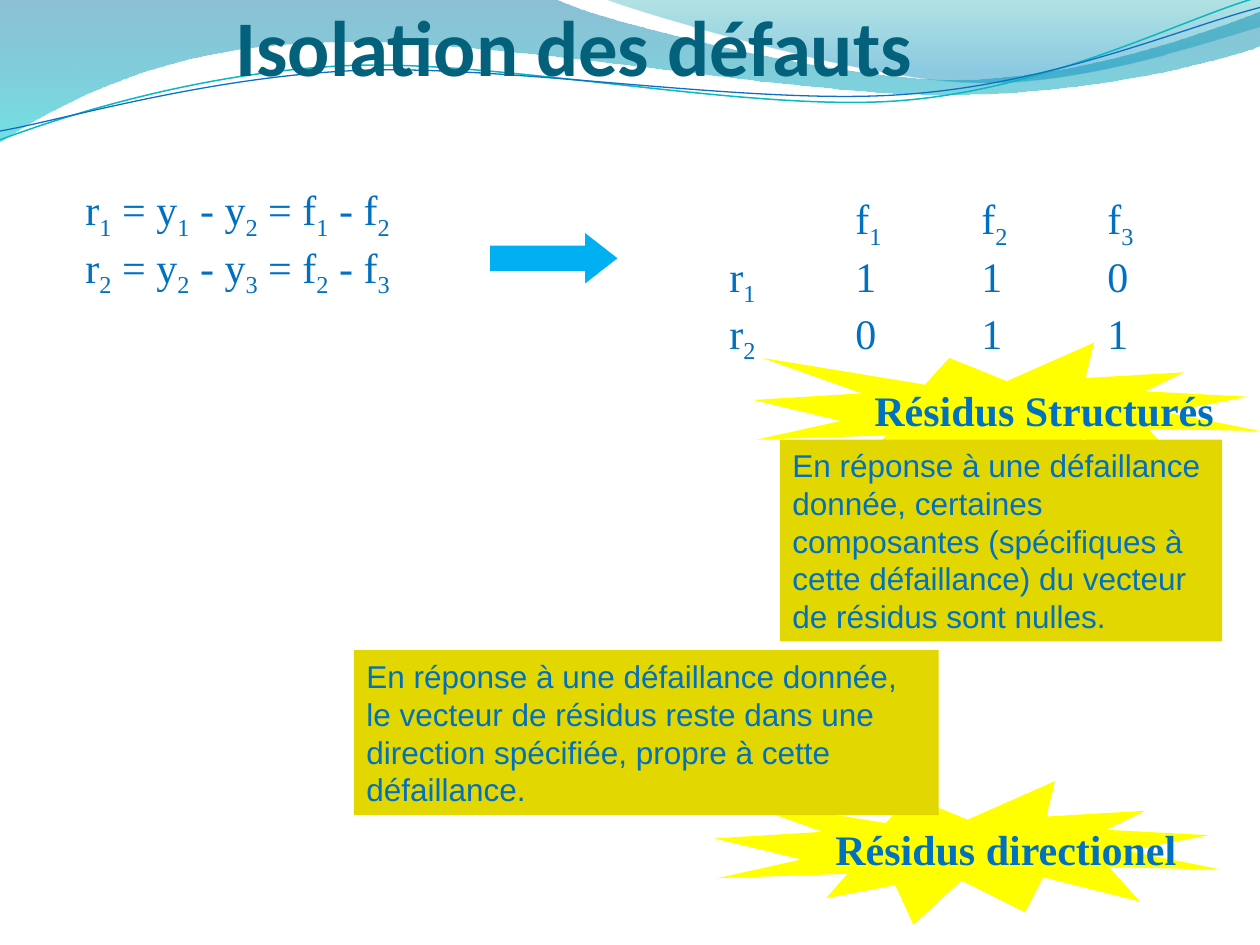
from math import cos, radians, sin

from lxml.etree import SubElement
from pptx import Presentation
from pptx.dml.color import RGBColor
from pptx.enum.shapes import MSO_SHAPE
from pptx.enum.text import MSO_ANCHOR, MSO_AUTO_SIZE, PP_ALIGN
from pptx.oxml.ns import qn
from pptx.util import Inches, Pt

HUES = {
    "title": "04617B", "text": "0070C0", "star": "FFFF00", "note": "E2D700",
    "arrow": "00B0F0", "teal": "0AB8BF", "blue": "0F6FC6",
    "deep": "0074A1", "cyan": "00C6CF", "sea": "00A1A9", "sky": "008BBF",
}
TITLE = {"name": "Calibri", "size": Pt(45), "bold": True}
MATH = {"name": "Times New Roman", "size": Pt(24)}
LABEL = {**MATH, "bold": True}
BODY = {"name": "Arial", "size": Pt(18)}
TILT = 357.3

# Each outline: start, then lines (one point) or curves (three points)
BANDS = [
    ([[(0, 0)], [(4.4, -0.01)], [(4.76, 0.17), (6.64, 0.63), (7.58, 0.63)],
      [(8.53, 0.63), (9.58, 0.26), (10, 0.09)], [(10.01, 0.36)],
      [(9.83, 0.44), (8.7, 0.76), (7.46, 0.75)],
      [(6.22, 0.75), (3.82, 0.28), (2.57, 0.34)],
      [(1.29, 0.36), (0.46, 0.83), (-0.01, 1.13)], [(0, 0)]],
     [(0, "deep", 45), (1, "cyan", 55)]),
    ([[(4.79, -0.01)], [(5.09, 0.11), (6.82, 0.62), (7.69, 0.65)],
      [(8.56, 0.69), (9.61, 0.32), (10, 0.21)], [(10, 0)], [(4.79, -0.01)]],
     [(0, "sea", 30), (0.8, "sky", 45)]),
]
WAVES = [
    ([[(0, 1.11)], [(0.48, 0.93), (1.58, 0.57), (2.77, 0.52)],
      [(3.95, 0.47), (5.93, 0.89), (7.13, 0.8)],
      [(8.33, 0.71), (9.38, 0.15), (9.98, -0.02)]],
     (4.99, 0.57), "teal", 0.85),
    ([[(0, 1.04)], [(0.47, 0.96), (1.64, 0.61), (2.83, 0.56)],
      [(4.03, 0.51), (5.97, 0.84), (7.17, 0.75)],
      [(8.36, 0.67), (9.41, 0.21), (10, 0.06)]],
     (5, 0.59), "blue", 0.75),
]


def rgb(hue):
    return RGBColor.from_string(HUES[hue])


def turn(dot, mid, angle):
    """Rotate a point clockwise about mid."""
    c, s = cos(radians(angle)), sin(radians(angle))
    x, y = dot[0] - mid[0], dot[1] - mid[1]
    return mid[0] + x * c - y * s, mid[1] + x * s + y * c


def add_free(slide, parts, close):
    """Draw an outline, joining each three points into a curve."""
    spots = [(Inches(x), Inches(y)) for part in parts for x, y in part]
    pen = slide.shapes.build_freeform(*spots[0])
    pen.add_line_segments(spots[1:], close=close)
    free = pen.convert_to_shape()
    free.shadow.inherit = False
    legs = iter(list(free.element.spPr.iter(qn("a:lnTo"))))
    for part in parts[1:]:
        curve = next(legs)
        if len(part) == 3:
            curve.tag = qn("a:cubicBezTo")
            for leg in (next(legs), next(legs)):
                curve.append(leg[0])
                leg.getparent().remove(leg)
    return free


def add_band(slide, parts, stops):
    band = add_free(slide, parts, True)
    band.line.fill.background()
    band.fill.gradient()
    band.fill.gradient_angle = 270
    for stop, (place, hue, _) in zip(band.fill.gradient_stops, stops):
        stop.position = place
        stop.color.rgb = rgb(hue)
    tints = band.element.spPr.iter(qn("a:srgbClr"))
    for tint, (_, _, alpha) in zip(tints, stops):
        SubElement(tint, qn("a:alpha")).set("val", str(alpha * 1000))


def add_wave(slide, parts, mid, hue, width):
    flat = [[turn(dot, mid, -TILT) for dot in part] for part in parts]
    wave = add_free(slide, flat, False)
    wave.rotation = TILT
    wave.fill.background()
    wave.line.color.rgb = rgb(hue)
    wave.line.width = Pt(width)


def add_shape(slide, kind, box, hue):
    shape = slide.shapes.add_shape(kind, *map(Inches, box))
    shape.shadow.inherit = False
    shape.fill.solid()
    shape.fill.fore_color.rgb = rgb(hue)
    shape.line.fill.background()
    return shape


def add_tabs(para, count):
    """Set tab stops one inch apart."""
    tabs = SubElement(para._p.get_or_add_pPr(), qn("a:tabLst"))
    for stop in range(1, count + 1):
        tab = SubElement(tabs, qn("a:tab"))
        tab.set("pos", str(Inches(stop)))
        tab.set("algn", "l")


def add_run(para, text, font, hue):
    run = para.add_run()
    run.text = text
    for key, value in font.items():
        setattr(run.font, key, value)
    run.font.color.rgb = rgb(hue)
    return run


def write(shape, lines, font, hue="text", **frame):
    """Fill a shape with lines; the sign after each _ is a subscript."""
    body = shape.text_frame
    for key, value in frame.items():
        setattr(body, key, value)
    for row, line in enumerate(lines):
        para = body.add_paragraph() if row else body.paragraphs[0]
        para.alignment = PP_ALIGN.LEFT
        if "\t" in line:
            add_tabs(para, line.count("\t"))
        head, *rest = line.split("_")
        add_run(para, head, font, hue)
        for part in rest:
            sub = add_run(para, part[0], font, hue)
            sub.font._element.set("baseline", "-25000")
            if part[1:]:
                add_run(para, part[1:], font, hue)


def add_text(slide, box, lines, font, hue="text", **frame):
    write(slide.shapes.add_textbox(*map(Inches, box)), lines, font, hue, **frame)


def add_star(slide, left, top, text):
    star = add_shape(slide, MSO_SHAPE.EXPLOSION1, (left, top, 4.02, 1.14), "star")
    write(star, [text], LABEL, word_wrap=False, vertical_anchor=MSO_ANCHOR.MIDDLE)


def add_note(slide, box, text):
    note = add_shape(slide, MSO_SHAPE.RECTANGLE, box, "note")
    write(note, [text], BODY, word_wrap=True, vertical_anchor=MSO_ANCHOR.MIDDLE,
          auto_size=MSO_AUTO_SIZE.SHAPE_TO_FIT_TEXT)


def main():
    deck = Presentation()
    deck.slide_width, deck.slide_height = Inches(10), Inches(7.5)
    slide = deck.slides.add_slide(deck.slide_layouts[6])
    for band in BANDS:
        add_band(slide, *band)
    for wave in WAVES:
        add_wave(slide, *wave)

    add_text(slide, (1.87, 0.13, 5.55, 0.6), ["Isolation des défauts"], TITLE, "title",
             word_wrap=True, vertical_anchor=MSO_ANCHOR.BOTTOM, margin_left=0,
             margin_right=0, margin_top=Inches(0.05), margin_bottom=0)

    add_star(slide, 5.67, 6.2, "Résidus directionel")
    add_note(slide, (2.81, 5.16, 4.64, 1.31),
             "En réponse à une défaillance donnée, le vecteur de résidus reste "
             "dans une direction spécifiée, propre à cette défaillance.")

    grow = MSO_AUTO_SIZE.SHAPE_TO_FIT_TEXT
    add_text(slide, (0.58, 1.41, 2.71, 0.91),
             ["r_1 = y_1 - y_2 = f_1 - f_2", "r_2 = y_2 - y_3 = f_2 - f_3"],
             MATH, word_wrap=False, auto_size=grow)
    arrow = add_shape(slide, MSO_SHAPE.RIGHT_ARROW, (3.89, 1.85, 1.01, 0.4), "arrow")
    arrow.adjustments[1] = 0.64
    add_text(slide, (5.69, 1.48, 3.82, 1.31),
             ["\tf_1\tf_2\tf_3", "r_1\t1\t1\t0", "r_2\t0\t1\t1"],
             MATH, word_wrap=True, auto_size=grow)

    add_star(slide, 5.98, 2.72, "Résidus Structurés")
    add_note(slide, (6.19, 3.49, 3.51, 1.6),
             "En réponse à une défaillance donnée, certaines composantes "
             "(spécifiques à cette défaillance) du vecteur de résidus sont nulles.")
    deck.save("out.pptx")


if __name__ == "__main__":
    main()
